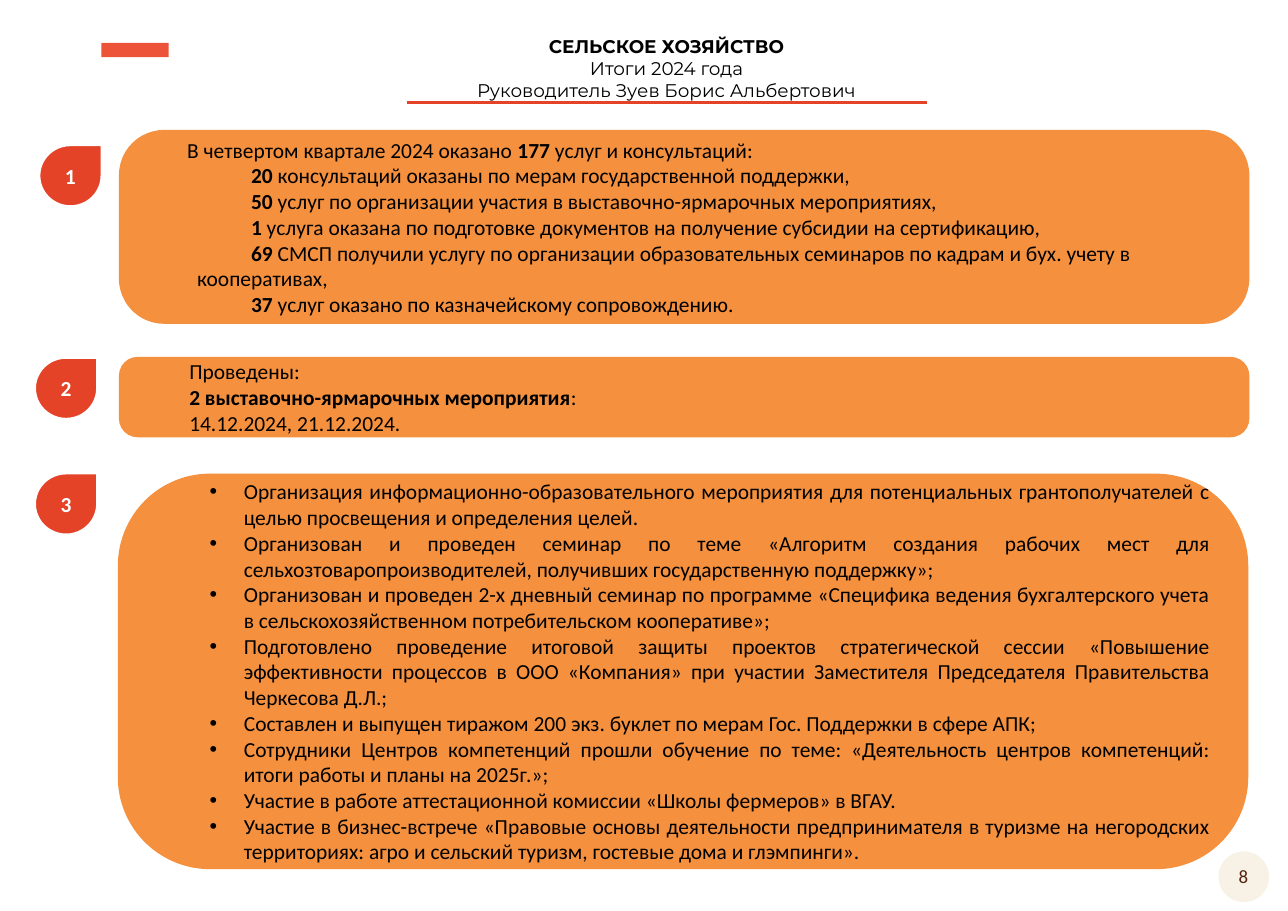
from dataclasses import dataclass

from lxml.etree import SubElement
from pptx import Presentation
from pptx.dml.color import RGBColor
from pptx.enum.shapes import MSO_CONNECTOR as Connector, MSO_SHAPE as Preset
from pptx.enum.text import MSO_ANCHOR as Anchor, PP_ALIGN as Align
from pptx.oxml.ns import qn
from pptx.util import Inches, Pt

RED, ORANGE, WHITE, BLACK = "E44328", "F4903E", "FFFFFF", "000000"
NO_MARGINS = dict.fromkeys(("margin_left", "margin_top", "margin_right", "margin_bottom"), 0)


@dataclass(frozen=True)
class Line:
    """One paragraph; text between ** marks is bold."""
    text: str
    align: Align = Align.JUSTIFY
    left: float = 0
    indent: float = 0
    bullet: bool = False


@dataclass(frozen=True)
class Font:
    size: float = 14
    name: str = "Calibri"
    color: str = BLACK


@dataclass(frozen=True)
class Section:
    number: int
    box: tuple
    badge: tuple
    lines: list


SERVICES = [
    "**20** консультаций оказаны по мерам государственной поддержки,",
    "**50** услуг по организации участия в выставочно-ярмарочных мероприятиях,",
    "**1** услуга оказана по подготовке документов на получение субсидии на сертификацию,",
    "**69** СМСП получили услугу по организации образовательных семинаров по кадрам и бух. учету в кооперативах,",
    "**37** услуг оказано по казначейскому сопровождению.",
]
FAIRS = ["Проведены:", "**2 выставочно-ярмарочных мероприятия**:", "14.12.2024, 21.12.2024."]
EVENTS = [
    "Организация информационно-образовательного мероприятия для потенциальных грантополучателей с целью "
    "просвещения и определения целей.",
    "Организован и проведен семинар по теме «Алгоритм создания рабочих мест для "
    "сельхозтоваропроизводителей, получивших государственную поддержку»;",
    "Организован и проведен 2-х дневный семинар по программе «Специфика ведения бухгалтерского учета в "
    "сельскохозяйственном потребительском кооперативе»;",
    "Подготовлено проведение итоговой защиты проектов стратегической сессии «Повышение эффективности "
    "процессов в ООО «Компания» при участии Заместителя Председателя Правительства Черкесова Д.Л.;",
    "Составлен и выпущен тиражом 200 экз. буклет по мерам Гос. Поддержки в сфере АПК;",
    "Сотрудники Центров компетенций прошли обучение по теме: «Деятельность центров компетенций: итоги "
    "работы и планы на 2025г.»;",
    "Участие в работе аттестационной комиссии «Школы фермеров» в ВГАУ.",
    "Участие в бизнес-встрече «Правовые основы деятельности предпринимателя в туризме на негородских "
    "территориях: агро и сельский туризм, гостевые дома и глэмпинги».",
]
TITLE = ["**СЕЛЬСКОЕ ХОЗЯЙСТВО**", "Итоги 2024 года", "Руководитель Зуев Борис Альбертович"]

SECTIONS = [
    Section(1, (1.08, 1.18, 10.26, 1.76), (0.36, 1.32),
            [Line("В четвертом квартале 2024 оказано **177** услуг и консультаций:", left=0.4)]
            + [Line(text, Align.LEFT, 0.49, 0.49) for text in SERVICES]),
    Section(2, (1.08, 3.24, 10.26, 0.73), (0.32, 3.25), [Line(text, left=0.49) for text in FAIRS]),
    Section(3, (1.07, 4.3, 10.26, 3.59), (0.32, 4.3),
            [Line(text, left=0.8, indent=-0.31, bullet=True) for text in EVENTS]),
]


def rgb(color: str) -> RGBColor:
    return RGBColor.from_string(color)


def set_all(target, values: dict) -> None:
    for name, value in values.items():
        setattr(target, name, value)


def write(shape, lines: list, font: Font, **frame_format) -> None:
    frame = shape.text_frame
    set_all(frame, {"word_wrap": True, "vertical_anchor": Anchor.MIDDLE, **frame_format})
    for index, line in enumerate(lines):
        paragraph = frame.add_paragraph() if index else frame.paragraphs[0]
        paragraph.alignment = line.align
        properties = paragraph._p.get_or_add_pPr()
        properties.set("marL", str(Inches(line.left)))
        properties.set("indent", str(Inches(line.indent)))
        if line.bullet:
            SubElement(properties, qn("a:buFont"), typeface="Arial")
            SubElement(properties, qn("a:buChar"), char="•")
        for part, text in enumerate(line.text.split("**")):
            if text:
                run = paragraph.add_run()
                run.text = text
                set_all(run.font, {"name": font.name, "size": Pt(font.size), "bold": part % 2 == 1})
                run.font.color.rgb = rgb(font.color)


def add_filled(slide, preset: Preset, box: tuple, fill: str, outline: str = ""):
    shape = slide.shapes.add_shape(preset, *map(Inches, box))
    shape.shadow.inherit = False
    shape.fill.solid()
    shape.fill.fore_color.rgb = rgb(fill)
    if outline:
        shape.line.color.rgb = rgb(outline)
        shape.line.width = Pt(1)
    else:
        shape.line.fill.background()
    return shape


def add_text(slide, box: tuple, lines: list, font: Font) -> None:
    write(slide.shapes.add_textbox(*map(Inches, box)), lines, font)


def add_section(slide, section: Section) -> None:
    """Draw the rounded panel and its numbered teardrop."""
    panel = add_filled(slide, Preset.ROUNDED_RECTANGLE, section.box, ORANGE)
    panel.adjustments[0] = 0.233
    write(panel, section.lines, Font())
    badge = add_filled(slide, Preset.TEAR, (*section.badge, 0.56, 0.55), RED, WHITE)
    write(badge, [Line(f"**{section.number}**", Align.CENTER)], Font(color=WHITE), **NO_MARGINS)


def add_title(slide) -> None:
    add_text(slide, (3.44, 0.14, 5.22, 0.95), [Line(text, Align.CENTER) for text in TITLE],
             Font(12, "Montserrat"))
    underline = slide.shapes.add_connector(
        Connector.STRAIGHT, *map(Inches, (3.69, 0.93, 8.41, 0.93)))
    underline.line.color.rgb = rgb(RED)
    underline.line.width = Pt(2.5)
    SubElement(underline._element.spPr, qn("a:effectLst"))


def main() -> None:
    presentation = Presentation()
    set_all(presentation, {"slide_width": Inches(11.69), "slide_height": Inches(8.27)})
    slide = presentation.slides.add_slide(presentation.slide_layouts[6])
    add_filled(slide, Preset.OVAL, (11.06, 7.73, 0.46, 0.46), "F7F2E5")
    add_text(slide, (11.03, 7.8, 0.51, 0.31), [Line("8", Align.CENTER)], Font(12.3, color="562212"))
    add_filled(slide, Preset.RECTANGLE, (0.92, 0.39, 0.61, 0.13), "ED5338")
    for section in reversed(SECTIONS):
        add_section(slide, section)
    add_title(slide)
    presentation.save("out.pptx")


if __name__ == "__main__":
    main()
